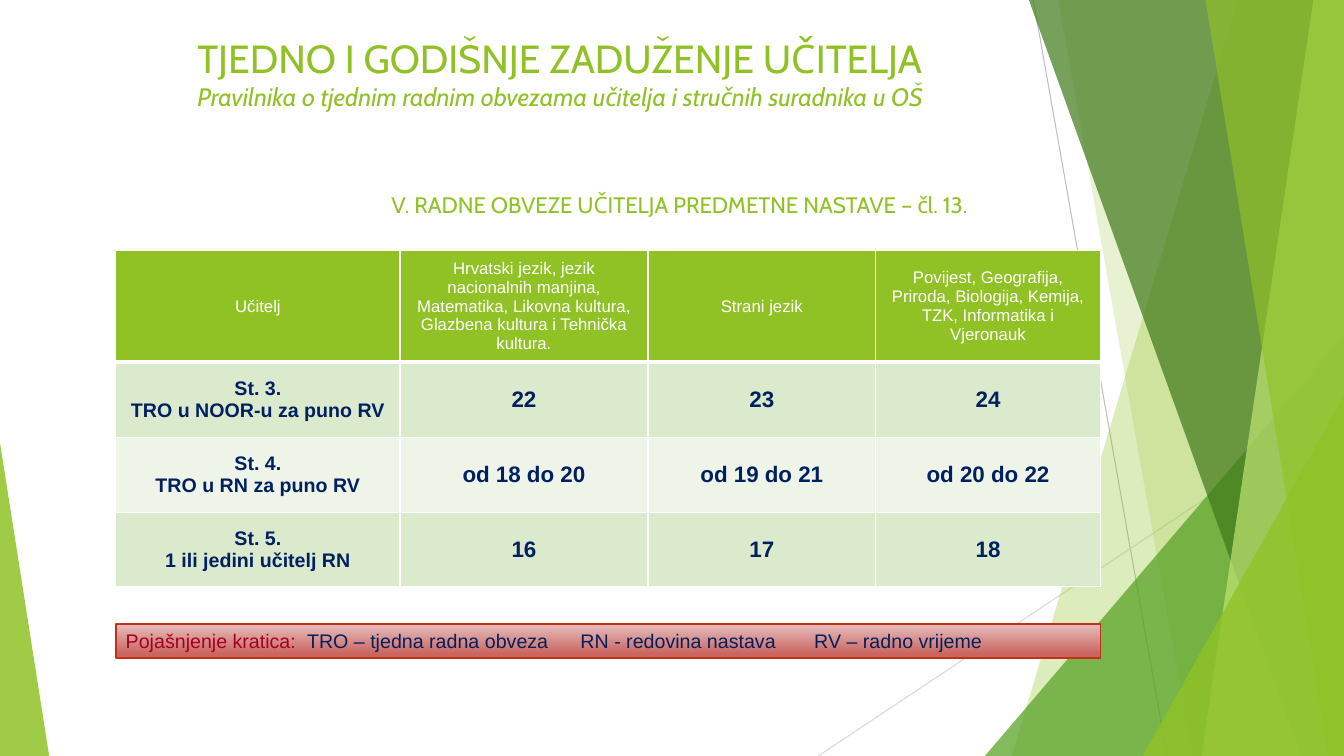
from pptx import Presentation
from pptx.dml.color import RGBColor
from pptx.enum.shapes import MSO_CONNECTOR, MSO_SHAPE
from pptx.enum.text import MSO_ANCHOR, MSO_AUTO_SIZE, PP_ALIGN
from pptx.oxml import parse_xml
from pptx.oxml.ns import nsdecls, qn
from pptx.util import Cm, Pt
from lxml import etree

STRAIGHT = MSO_CONNECTOR.STRAIGHT
TRIANGLE, RECTANGLE = MSO_SHAPE.ISOSCELES_TRIANGLE, MSO_SHAPE.RECTANGLE
TOP, MIDDLE, BOTTOM = MSO_ANCHOR.TOP, MSO_ANCHOR.MIDDLE, MSO_ANCHOR.BOTTOM
LEFT, CENTER = PP_ALIGN.LEFT, PP_ALIGN.CENTER
NO_AUTOFIT = MSO_AUTO_SIZE.NONE

WHITE = RGBColor(0xFF, 0xFF, 0xFF)
GREEN = RGBColor(0x90, 0xC2, 0x26)
LEAF = RGBColor(0x54, 0xA0, 0x21)
FOREST = RGBColor(0x3F, 0x78, 0x19)
LIME = RGBColor(0xC0, 0xE4, 0x74)
BAND_DARK = RGBColor(0xDB, 0xE9, 0xCD)
BAND_LIGHT = RGBColor(0xEE, 0xF4, 0xE8)
NAVY = RGBColor(0x00, 0x20, 0x60)
CRIMSON = RGBColor(0xA5, 0x00, 0x21)
RED = RGBColor(0xC4, 0x2F, 0x1A)
ROSE = RGBColor(0xE6, 0xBF, 0xBE)
BRICK = RGBColor(0xCB, 0x65, 0x60)
GRAY = RGBColor(0xBF, 0xBF, 0xBF)
PALE_GRAY = RGBColor(0xD9, 0xD9, 0xD9)

WIDTH, HEIGHT = 33.87, 19.05
TABLE_LEFT, TABLE_WIDTH = 2.92, 24.81

HEADING = {"name": "Cabin", "size": Pt(28), "color": GREEN}
CITATION = {**HEADING, "size": Pt(18), "italic": True}
SECTION = {**HEADING, "size": Pt(16)}
HEADER = {"name": "Arial", "size": Pt(12), "color": WHITE, "bold": False}
LABEL = {"name": "Arial", "size": Pt(14), "color": NAVY, "bold": True}
HOURS = {**LABEL, "size": Pt(16)}
LEGEND = {**LABEL, "bold": False}
LEGEND_TITLE = {**LEGEND, "color": CRIMSON}

SHARDS = [
    (31.19, 25.5, GREEN, 30),
    (26.67, 30.05, GREEN, 20),
    (25.93, 32.79, FOREST, 70),
    (33.1, 30.28, LIME, 70),
    (30.38, 33.48, GREEN, 65),
]
COLUMN_WIDTHS = [7.16, 6.25, 5.74, 5.66]
ROW_HEIGHTS = [2.79, 1.91, 1.88, 1.88]
ROWS = [
    ["Učitelj",
     "Hrvatski jezik, jezik nacionalnih manjina, Matematika, Likovna kultura, "
     "Glazbena kultura i Tehnička kultura.",
     "Strani jezik",
     "Povijest, Geografija, Priroda, Biologija, Kemija, TZK, Informatika i Vjeronauk"],
    ["St. 3.\nTRO u NOOR-u za puno RV", "22", "23", "24"],
    ["St. 4.\nTRO u RN za puno RV", "od 18 do 20", "od 19 do 21", "od 20 do 22"],
    ["St. 5.\n1 ili jedini učitelj RN", "16", "17", "18"],
]


class Slide:
    def __init__(self, deck):
        self.page = deck.slides.add_slide(deck.slide_layouts[5])
        self.shapes = self.page.shapes

    def add_text(self, frame, paragraphs, align=LEFT, anchor=TOP):
        frame.word_wrap = True
        frame.vertical_anchor = anchor
        for index, spans in enumerate(paragraphs):
            para = frame.add_paragraph() if index else frame.paragraphs[0]
            para.alignment = align
            for text, style in spans:
                span = para.add_run()
                span.text = text
                for key, value in style.items():
                    if key == "color":
                        span.font.color.rgb = value
                    else:
                        setattr(span.font, key, value)

    def place(self, shape, left, top, width, height):
        bounds = {"left": left, "top": top, "width": width, "height": height}
        for key, value in bounds.items():
            setattr(shape, key, Cm(value))

    def title(self, bounds, paragraphs):
        box = self.shapes.title
        box.element.getparent().append(box.element)
        self.place(box, *bounds)
        box.text_frame.auto_size = NO_AUTOFIT
        self.add_text(box.text_frame, paragraphs)

    def section(self, bounds, text):
        box = self.shapes.add_textbox(*map(Cm, bounds))
        box.text_frame.margin_bottom = Cm(0.22)
        self.add_text(box.text_frame, [[(text, SECTION)]], CENTER, BOTTOM)

    def line(self, start, end, color):
        line = self.shapes.add_connector(STRAIGHT, *map(Cm, start + end))
        line.line.color.rgb = color
        line.line.width = Pt(0.75)
        etree.SubElement(line.element.spPr, qn("a:effectLst"))

    def tint(self, shape, color, opacity):
        shape.shadow.inherit = False
        shape.line.fill.background()
        shape.fill.solid()
        shape.fill.fore_color.rgb = color
        tone = shape.element.spPr.find(".//" + qn("a:srgbClr"))
        etree.SubElement(tone, qn("a:alpha")).set("val", str(opacity * 1000))

    def shard(self, top_left, bottom_left, color, opacity):
        outline = self.shapes.build_freeform(Cm(top_left), 0)
        corners = [(WIDTH, 0), (WIDTH, HEIGHT), (bottom_left, HEIGHT)]
        outline.add_line_segments([(Cm(x), Cm(y)) for x, y in corners])
        self.tint(outline.convert_to_shape(), color, opacity)

    def triangle(self, bounds, peak, color, opacity):
        shape = self.shapes.add_shape(TRIANGLE, *map(Cm, bounds))
        shape.adjustments[0] = peak
        self.tint(shape, color, opacity)

    def border(self, cell, bottom):
        properties = cell._tc.get_or_add_tcPr()
        for side, width in {"L": 1, "R": 1, "T": 1, "B": bottom}.items():
            properties.append(parse_xml(
                f'<a:ln{side} {nsdecls("a")} w="{Pt(width)}"><a:solidFill>'
                f'<a:srgbClr val="{WHITE}"/></a:solidFill></a:ln{side}>'))

    def table(self, left, top):
        frame = self.shapes.add_table(
            len(ROWS), len(COLUMN_WIDTHS), Cm(left), Cm(top),
            Cm(TABLE_WIDTH), Cm(sum(ROW_HEIGHTS)))
        table = frame.table
        for column, width in zip(table.columns, COLUMN_WIDTHS):
            column.width = Cm(width)
        for row, (texts, height) in enumerate(zip(ROWS, ROW_HEIGHTS)):
            table.rows[row].height = Cm(height)
            fill = (BAND_DARK if row % 2 else BAND_LIGHT) if row else GREEN
            for column, text in enumerate(texts):
                cell = table.cell(row, column)
                style = (HOURS if column else LABEL) if row else HEADER
                lines = [[(line, style)] for line in text.split("\n")]
                self.add_text(cell.text_frame, lines, CENTER)
                cell.vertical_anchor = MIDDLE
                self.border(cell, 1 if row else 3)
                cell.fill.solid()
                cell.fill.fore_color.rgb = fill
        first_label = table.cell(1, 0).text_frame.paragraphs[0]
        first_label._p.get_or_add_pPr().set("indent", str(-Cm(1.22)))

    def legend(self, bounds, spans, tabs):
        box = self.shapes.add_shape(RECTANGLE, *map(Cm, bounds))
        box.shadow.inherit = False
        box.line.color.rgb = RED
        box.line.width = Pt(1)
        box.fill.gradient()
        box.fill.gradient_angle = 270
        for stop, color, position in zip(box.fill.gradient_stops, (ROSE, BRICK), (0, 0.88)):
            stop.color.rgb = color
            stop.position = position
        self.add_text(box.text_frame, [spans], anchor=MIDDLE)
        properties = box.text_frame.paragraphs[0]._p.get_or_add_pPr()
        stops = etree.SubElement(properties, qn("a:tabLst"))
        for tab in tabs:
            etree.SubElement(stops, qn("a:tab"), pos=str(Cm(tab)), algn="l")


def main():
    deck = Presentation()
    deck.slide_width, deck.slide_height = Cm(WIDTH), Cm(HEIGHT)
    slide = Slide(deck)
    slide.line((26.04, 0), (29.41, HEIGHT), GRAY)
    slide.line((WIDTH, 10.24), (20.62, HEIGHT), PALE_GRAY)
    for shard in SHARDS[:2]:
        slide.shard(*shard)
    slide.triangle((24.82, 8.46, 9.05, 10.59), 1, LEAF, 72)
    for shard in SHARDS[2:]:
        slide.shard(*shard)
    slide.triangle((28.8, 9.98, 5.07, 9.07), 1, GREEN, 80)
    slide.triangle((0, 11.15, 1.24, 7.9), 0, GREEN, 85)
    slide.title((4.72, 0.74, 24.41, 3.43), [
        [("TJEDNO I GODIŠNJE ZADUŽENJE UČITELJA", HEADING)],
        [("Pravilnika o tjednim radnim obvezama učitelja i stručnih suradnika u OŠ", CITATION)],
    ])
    slide.section((5.13, 4.32, 24, 1.4), "V. RADNE OBVEZE UČITELJA PREDMETNE NASTAVE – čl. 13.")
    slide.table(TABLE_LEFT, 6.32)
    slide.legend((TABLE_LEFT, 15.72, TABLE_WIDTH, 0.86), [
        ("Pojašnjenje kratica:", LEGEND_TITLE),
        ("\tTRO – tjedna radna obveza\tRN - redovina nastava\tRV – radno vrijeme", LEGEND),
    ], (4.57, 11.46, 17.35))
    deck.save("out.pptx")


if __name__ == "__main__":
    main()
